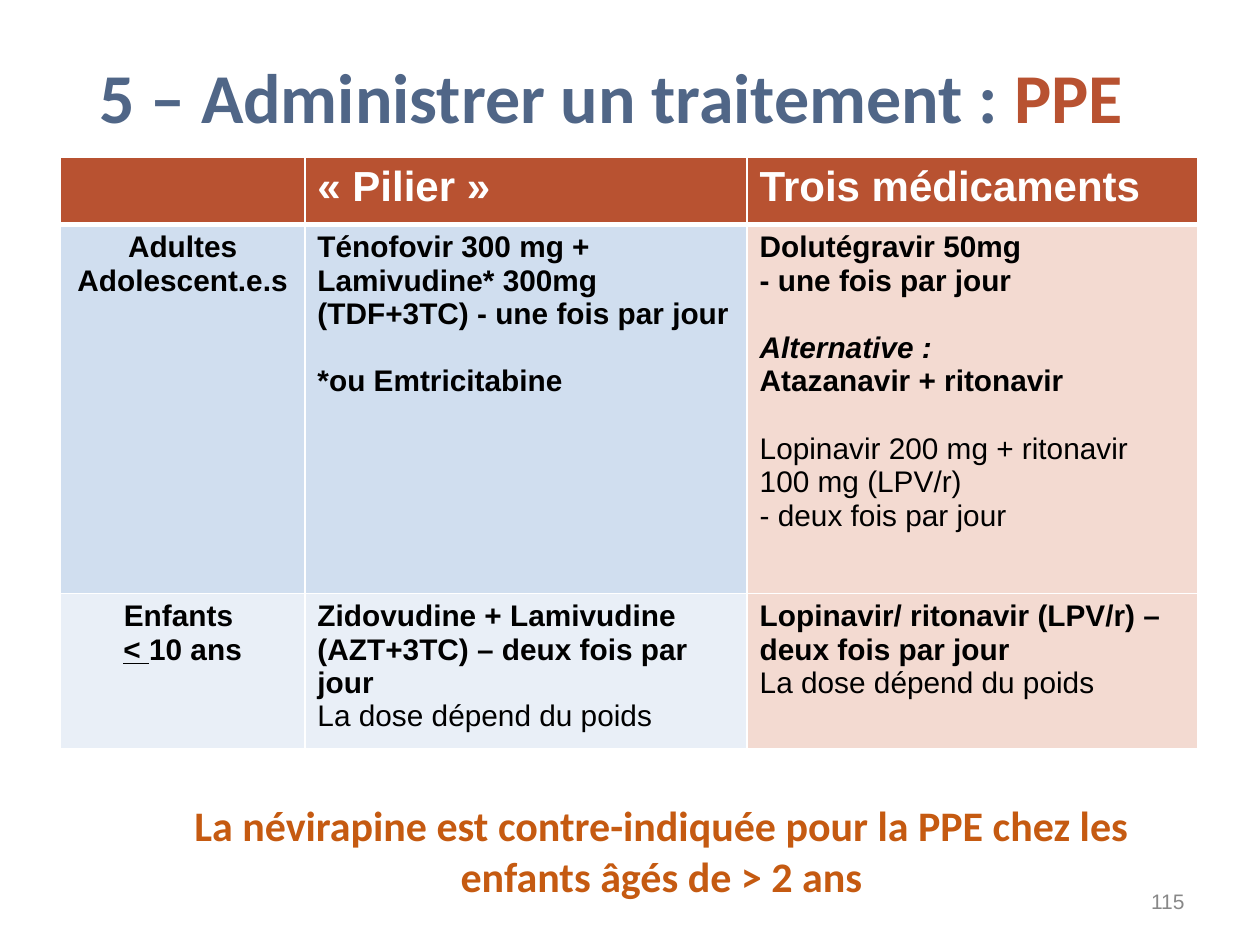
from lxml import etree
from pptx import Presentation
from pptx.dml.color import RGBColor
from pptx.enum.text import MSO_ANCHOR, PP_ALIGN
from pptx.oxml.ns import qn
from pptx.util import Inches, Pt

LEFT, CENTER, RIGHT = PP_ALIGN.LEFT, PP_ALIGN.CENTER, PP_ALIGN.RIGHT
TOP, MIDDLE = MSO_ANCHOR.TOP, MSO_ANCHOR.MIDDLE

WHITE = RGBColor(0xFF, 0xFF, 0xFF)
BLACK = RGBColor(0x00, 0x00, 0x00)
RUST = RGBColor(0xB8, 0x52, 0x31)
SLATE = RGBColor(0x50, 0x66, 0x87)
ORANGE = RGBColor(0xC5, 0x5A, 0x11)
GRAY = RGBColor(0x88, 0x88, 0x88)
BLUE = RGBColor(0xD0, 0xDE, 0xEF)
PALE_BLUE = RGBColor(0xE9, 0xEF, 0xF7)
PEACH = RGBColor(0xF3, 0xDA, 0xD1)

TITLE = {"name": "Calibri", "size": Pt(40), "bold": True, "color": SLATE}
WARNING = {"name": "Calibri", "size": Pt(24), "bold": True, "color": ORANGE}
NUMBER = {"name": "Arial", "size": Pt(12), "color": GRAY}
HEADER = {"name": "Arial", "size": Pt(24), "bold": True, "color": WHITE}
STRONG = {"name": "Arial", "size": Pt(17), "bold": True, "color": BLACK}
PLAIN = {**STRONG, "bold": False}
ITALIC = {**STRONG, "italic": True}
UNDERLINED = {**STRONG, "underline": True}

GAP = Pt(19.5)  # one line of body text
COLUMNS = (1.94, 3.51, 3.58)
ROWS = (0.53, 2.93, 1.16)

# A cell is a list of paragraphs: (space before, [(text, format), ...])
HEADINGS = [
    [],
    [(0, [("« Pilier »", HEADER)])],
    [(0, [("Trois médicaments", HEADER)])],
]
ADULTS = [
    [(0, [("Adultes", STRONG)]), (0, [("Adolescent.e.s", STRONG)])],
    [
        (0, [("Ténofovir 300 mg + Lamivudine* 300mg (TDF+3TC) - une fois par jour", STRONG)]),
        (GAP, [("*ou Emtricitabine", STRONG)]),
    ],
    [
        (0, [("Dolutégravir 50mg", STRONG)]),
        (0, [("- une fois par jour", STRONG)]),
        (GAP, [("Alternative :", ITALIC)]),
        (0, [("Atazanavir + ritonavir", STRONG)]),
        (GAP, [("Lopinavir 200 mg + ritonavir 100 mg (LPV/r)", PLAIN)]),
        (0, [("- deux fois par jour", PLAIN)]),
    ],
]
DOSE = (0, [("La dose dépend du poids", PLAIN)])
CHILDREN = [
    [(0, [("Enfants ", STRONG)]), (0, [("< ", UNDERLINED), ("10 ans", STRONG)])],
    [(0, [("Zidovudine + Lamivudine (AZT+3TC) – deux fois par jour", STRONG)]), DOSE],
    [(0, [("Lopinavir/ ritonavir (LPV/r) – deux fois par jour", STRONG)]), DOSE],
]
TABLE_ROWS = [
    (HEADINGS, (RUST, RUST, RUST)),
    (ADULTS, (BLUE, BLUE, PEACH)),
    (CHILDREN, (PALE_BLUE, PALE_BLUE, PEACH)),
]


def write_paragraphs(frame, paragraphs, align=LEFT, line_spacing=None):
    for index, (space, spans) in enumerate(paragraphs):
        para = frame.add_paragraph() if index else frame.paragraphs[0]
        para.alignment = align
        if space:
            para.space_before = space
        if line_spacing:
            para.line_spacing = line_spacing
        for text, style in spans:
            span = para.add_run()
            span.text = text
            for key, value in style.items():
                if key == "color":
                    span.font.color.rgb = value
                else:
                    setattr(span.font, key, value)


def add_text(page, box, spans, align=LEFT, anchor=TOP, line_spacing=None, inset_top=0.05):
    frame = page.shapes.add_textbox(*map(Inches, box)).text_frame
    frame.word_wrap = True
    frame.vertical_anchor = anchor
    frame.margin_top = Inches(inset_top)
    write_paragraphs(frame, [(0, spans)], align, line_spacing)


def set_borders(cell, widths):
    """Draw white borders; widths in points for left, right, top, bottom."""
    properties = cell._tc.get_or_add_tcPr()
    for index, (side, width) in enumerate(zip("LRTB", widths)):
        line = etree.Element(qn(f"a:ln{side}"), w=str(Pt(width)))
        fill = etree.SubElement(line, qn("a:solidFill"))
        etree.SubElement(fill, qn("a:srgbClr"), val=str(WHITE))
        properties.insert(index, line)


def add_treatment_table(page, left, top):
    box = map(Inches, (left, top, sum(COLUMNS), sum(ROWS)))
    table = page.shapes.add_table(len(ROWS), len(COLUMNS), *box).table
    for column, width in zip(table.columns, COLUMNS):
        column.width = Inches(width)
    for row_index, (contents, fills) in enumerate(TABLE_ROWS):
        table.rows[row_index].height = Inches(ROWS[row_index])
        # The line under the header row is thicker
        widths = (1, 1, 3 if row_index == 1 else 1, 3 if row_index == 0 else 1)
        for column_index, (paragraphs, color) in enumerate(zip(contents, fills)):
            cell = table.cell(row_index, column_index)
            cell.fill.solid()
            cell.fill.fore_color.rgb = color
            set_borders(cell, widths)
            align = CENTER if column_index == 0 else LEFT
            write_paragraphs(cell.text_frame, paragraphs, align)


def build_treatment_slide(deck):
    page = deck.slides.add_slide(deck.slide_layouts[6])
    # Title
    title = [("5 – Administrer un traitement : ", TITLE), ("PPE", {**TITLE, "color": RUST})]
    add_text(page, (0.69, 0.5, 8.62, 0.82), title, line_spacing=0.9, inset_top=0)
    # Treatments by age group
    add_treatment_table(page, 0.48, 1.25)
    # Warning
    warning = "La névirapine est contre-indiquée pour la PPE chez les enfants âgés de > 2 ans"
    add_text(page, (0.98, 6.3, 8.54, 0.5), [(warning, WARNING)], CENTER)
    # Slide number
    add_text(page, (7.17, 6.95, 2.33, 0.4), [("115", NUMBER)], RIGHT, MIDDLE)


def main():
    deck = Presentation()
    deck.slide_width, deck.slide_height = Inches(10), Inches(7.5)
    build_treatment_slide(deck)
    deck.save("out.pptx")


if __name__ == "__main__":
    main()
